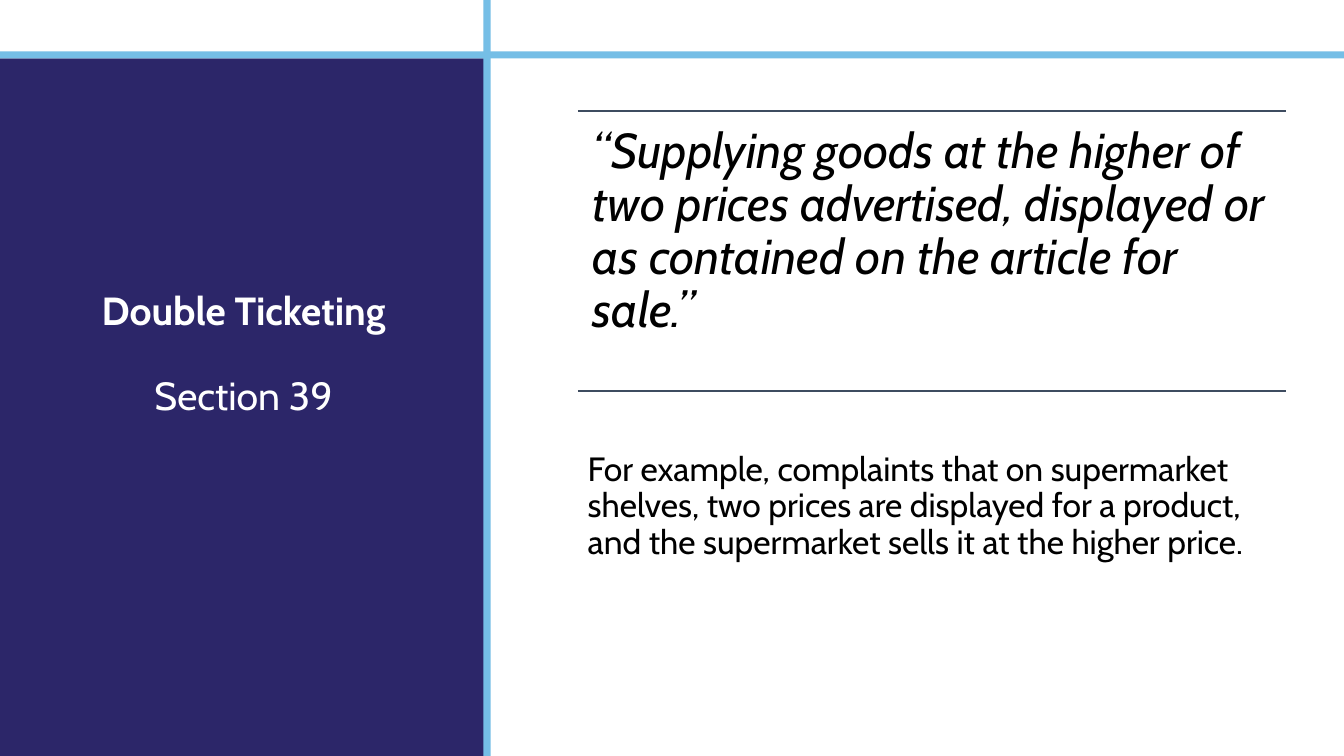
from lxml import etree
from pptx import Presentation
from pptx.dml.color import RGBColor
from pptx.enum.shapes import MSO_CONNECTOR, MSO_SHAPE
from pptx.enum.text import MSO_ANCHOR, PP_ALIGN
from pptx.oxml.ns import qn
from pptx.util import Inches, Pt

RECTANGLE = MSO_SHAPE.RECTANGLE
STRAIGHT = MSO_CONNECTOR.STRAIGHT
TOP = MSO_ANCHOR.TOP
LEFT, CENTER = PP_ALIGN.LEFT, PP_ALIGN.CENTER

COLORS = {
    "navy": "2C2669",
    "sky": "75BEE6",
    "slate": "3E4C60",
    "white": "FFFFFF",
    "black": "000000",
}
FONT = "Cabin"
WIDTH, HEIGHT = Inches(13.33), Inches(7.5)

# Shares of the slide, in percent
PANEL_WIDTH, PANEL_TOP = 36.46, 7.73
BAR_WIDTH, BAR_HEIGHT = 0.53, 0.93
BODY_LEFT, BODY_WIDTH = 42.99, 52.7
BODY_TOP, BODY_ROW = 14.67, 37.07


def across(percent):
    return round(WIDTH * percent / 100)


def down(percent):
    return round(HEIGHT * percent / 100)


def color(name):
    return RGBColor.from_string(COLORS[name])


def add_block(slide, left, top, width, height, fill):
    block = slide.shapes.add_shape(
        RECTANGLE, across(left), down(top), across(width), down(height))
    block.shadow.inherit = False
    block.fill.solid()
    block.fill.fore_color.rgb = color(fill)
    block.line.fill.background()


def add_rule(slide, top):
    rule = slide.shapes.add_connector(
        STRAIGHT, across(BODY_LEFT), down(top),
        across(BODY_LEFT + BODY_WIDTH), down(top))
    rule.line.color.rgb = color("slate")
    rule.line.width = Pt(1)
    etree.SubElement(rule._element.spPr, qn("a:effectLst"))


def add_text_frame(slide, left, top, width, height, inset, inset_top):
    """Add a wrapping text box; insets are in inches."""
    box = slide.shapes.add_textbox(
        across(left), down(top), across(width), down(height))
    frame = box.text_frame
    frame.word_wrap = True
    frame.vertical_anchor = TOP
    frame.margin_left = frame.margin_right = frame.margin_bottom = Inches(inset)
    frame.margin_top = Inches(inset_top)
    return frame


def write(paragraph, text, size, ink, align=LEFT, bold=False, italic=False):
    paragraph.alignment = align
    paragraph.line_spacing = 0.9
    run = paragraph.add_run()
    run.text = text
    run.font.name = FONT
    run.font.size = Pt(size)
    run.font.bold = bold
    run.font.italic = italic
    run.font.color.rgb = color(ink)


def add_title(slide):
    title = add_text_frame(slide, 4.95, 37.87, 26.33, 51.07, 0.1, 0.05)
    write(title.paragraphs[0], "Double Ticketing", 28, "white", CENTER, bold=True)
    section = title.add_paragraph()
    section.space_before = Pt(30.5)
    write(section, "Section 39", 28, "white", CENTER)


def main():
    prs = Presentation()
    prs.slide_width, prs.slide_height = WIDTH, HEIGHT
    slide = prs.slides.add_slide(prs.slide_layouts[6])

    add_block(slide, 0, PANEL_TOP, PANEL_WIDTH, 100 - PANEL_TOP, "navy")
    add_title(slide)
    add_block(slide, 35.97, 0, BAR_WIDTH, 100, "sky")
    add_block(slide, 0, PANEL_TOP - BAR_HEIGHT, 100, BAR_HEIGHT, "sky")

    passages = [
        ("“Supplying goods at the higher of two prices advertised, displayed "
         "or as contained on the article for sale.”", 35, True, 0.15, 0.15),
        ("For example, complaints that on supermarket shelves, two prices are "
         "displayed for a product, and the supermarket sells it at the higher "
         "price.", 24, False, 0.1, 0.61),
    ]
    for row, (text, size, italic, inset, inset_top) in enumerate(passages):
        top = BODY_TOP + row * BODY_ROW
        add_rule(slide, top)
        passage = add_text_frame(
            slide, BODY_LEFT, top, BODY_WIDTH, BODY_ROW, inset, inset_top)
        write(passage.paragraphs[0], text, size, "black", italic=italic)

    prs.save("out.pptx")


if __name__ == "__main__":
    main()
